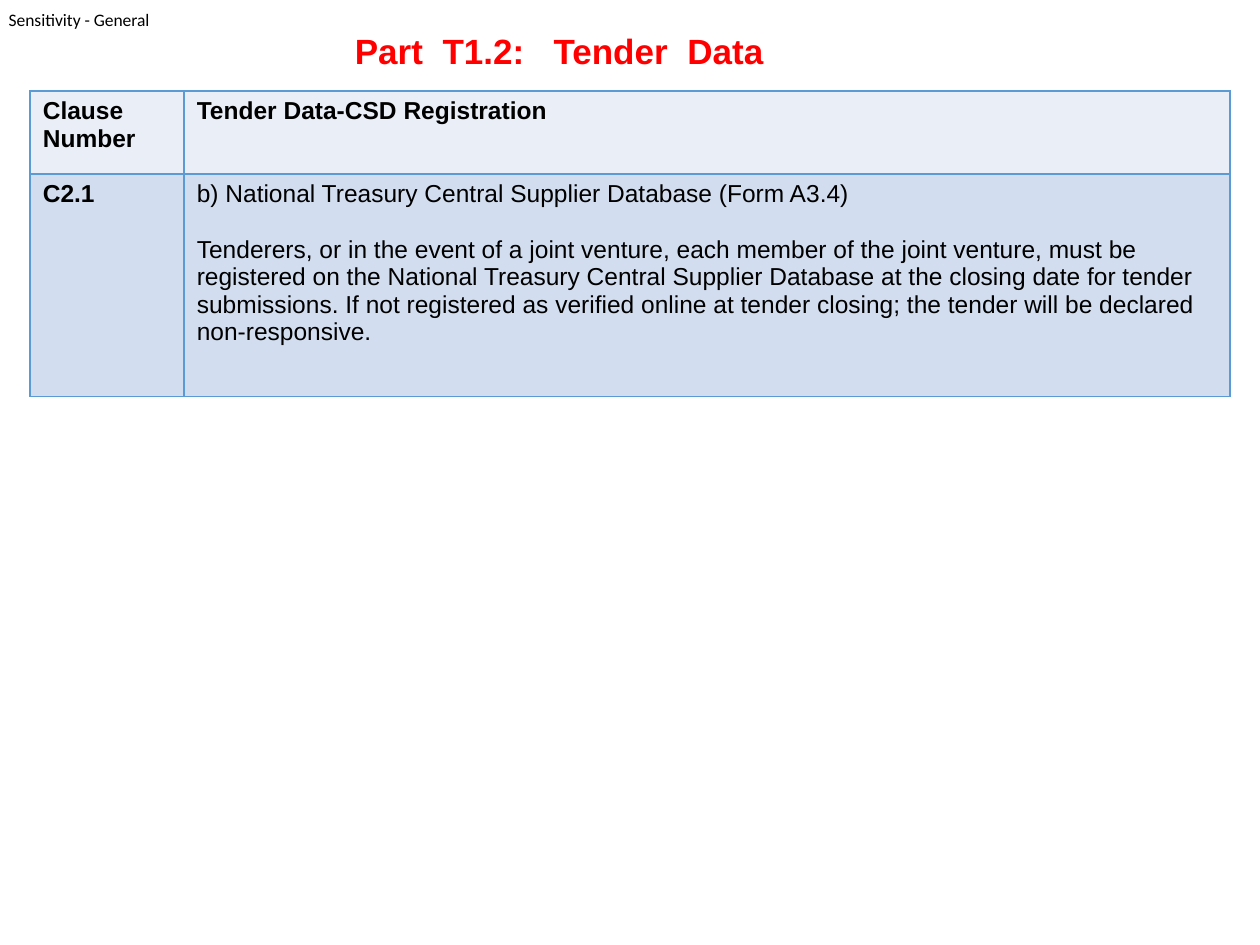
from dataclasses import dataclass

from lxml import etree
from pptx import Presentation
from pptx.dml.color import RGBColor
from pptx.enum import text
from pptx.oxml import ns
from pptx.util import Pt


@dataclass(frozen=True)
class Theme:
    ink: str = "000000"
    title: str = "FF0000"
    border: str = "5B9BD5"
    header_fill: str = "EAEFF7"
    body_fill: str = "D2DEEF"
    font: str = "Arial"
    label_font: str = "Calibri"
    label_size: int = 10
    title_size: int = 20
    table_size: int = 14


THEME = Theme()
TITLE_WORDS = [("Part", 0), ("T1.2:", 1), ("Tender", 2), ("Data", 1)]
ROWS = [
    [["Clause", "Number"], ["Tender Data-CSD Registration"]],
    [["C2.1"], [
        "b) National Treasury Central Supplier Database (Form A3.4)",
        "Tenderers, or in the event of a joint venture, each member of the joint "
        "venture, must be registered on the National Treasury Central Supplier "
        "Database at the closing date for tender submissions. If not registered as "
        "verified online at tender closing; the tender will be declared "
        "non-responsive.",
    ]],
]


def apply(target, **values):
    for name, value in values.items():
        setattr(target, name, value)


def add_run(p, words, size, color, bold=False, name=THEME.font):
    r = p.add_run()
    r.text = words
    apply(r.font, size=Pt(size), bold=bold, name=name)
    r.font.color.rgb = RGBColor.from_string(color)
    return r


def add_label(s, left, top, width, height):
    tf = s.shapes.add_textbox(Pt(left), Pt(top), Pt(width), Pt(height)).text_frame
    apply(tf, margin_left=0, margin_top=0, margin_right=0, margin_bottom=0,
          word_wrap=True)
    add_run(tf.paragraphs[0], "Sensitivity - General", THEME.label_size,
            THEME.ink, name=THEME.label_font)


def add_title(s, left, top, width, height):
    sp = s.shapes.title
    apply(sp, left=Pt(left), top=Pt(top), width=Pt(width), height=Pt(height))
    tf = sp.text_frame
    apply(tf, word_wrap=False, auto_size=text.MSO_AUTO_SIZE.NONE,
          vertical_anchor=text.MSO_ANCHOR.TOP)
    p = tf.paragraphs[0]
    p.alignment = text.PP_ALIGN.CENTER
    style = dict(size=THEME.title_size, color=THEME.title, bold=True)
    for word, extra in TITLE_WORDS:
        if extra:
            gap = add_run(p, " ", **style)
            gap.font._element.set("spc", str(extra * 556))
        add_run(p, word, **style)


def add_borders(cell):
    tc_pr = cell._tc.get_or_add_tcPr()
    for side in "LRTB":
        line = etree.SubElement(tc_pr, ns.qn(f"a:ln{side}"), w=str(Pt(1)))
        fill = etree.SubElement(line, ns.qn("a:solidFill"))
        etree.SubElement(fill, ns.qn("a:srgbClr"), val=THEME.border)


def add_clauses(s, left, top, width, height):
    table = s.shapes.add_table(2, 2, Pt(left), Pt(top), Pt(width), Pt(height)).table
    apply(table, first_row=False, horz_banding=False)
    number_width, header_height = 88, 47.5
    table.columns[0].width = Pt(number_width)
    table.columns[1].width = Pt(width - number_width)
    table.rows[0].height = Pt(header_height)
    table.rows[1].height = Pt(height - header_height)
    for i, (row, fill) in enumerate(zip(ROWS, (THEME.header_fill, THEME.body_fill))):
        for j, lines in enumerate(row):
            cell = table.cell(i, j)
            add_borders(cell)
            cell.fill.solid()
            cell.fill.fore_color.rgb = RGBColor.from_string(fill)
            is_body = i == 1 and j == 1
            for n, line in enumerate(lines):
                tf = cell.text_frame
                p = tf.add_paragraph() if n else tf.paragraphs[0]
                if n and is_body:
                    p.space_before = Pt(16)
                add_run(p, line, THEME.table_size, THEME.ink, bold=not is_body)


def main():
    prs = Presentation()
    apply(prs, slide_width=Pt(720), slide_height=Pt(540))
    s = prs.slides.add_slide(prs.slide_layouts[5])
    add_label(s, 5, 5, 83, 12)
    add_title(s, 195, 13.5, 249, 31.5)
    add_clauses(s, 17.25, 52, 685.5, 174.5)
    prs.save("out.pptx")


if __name__ == "__main__":
    main()
